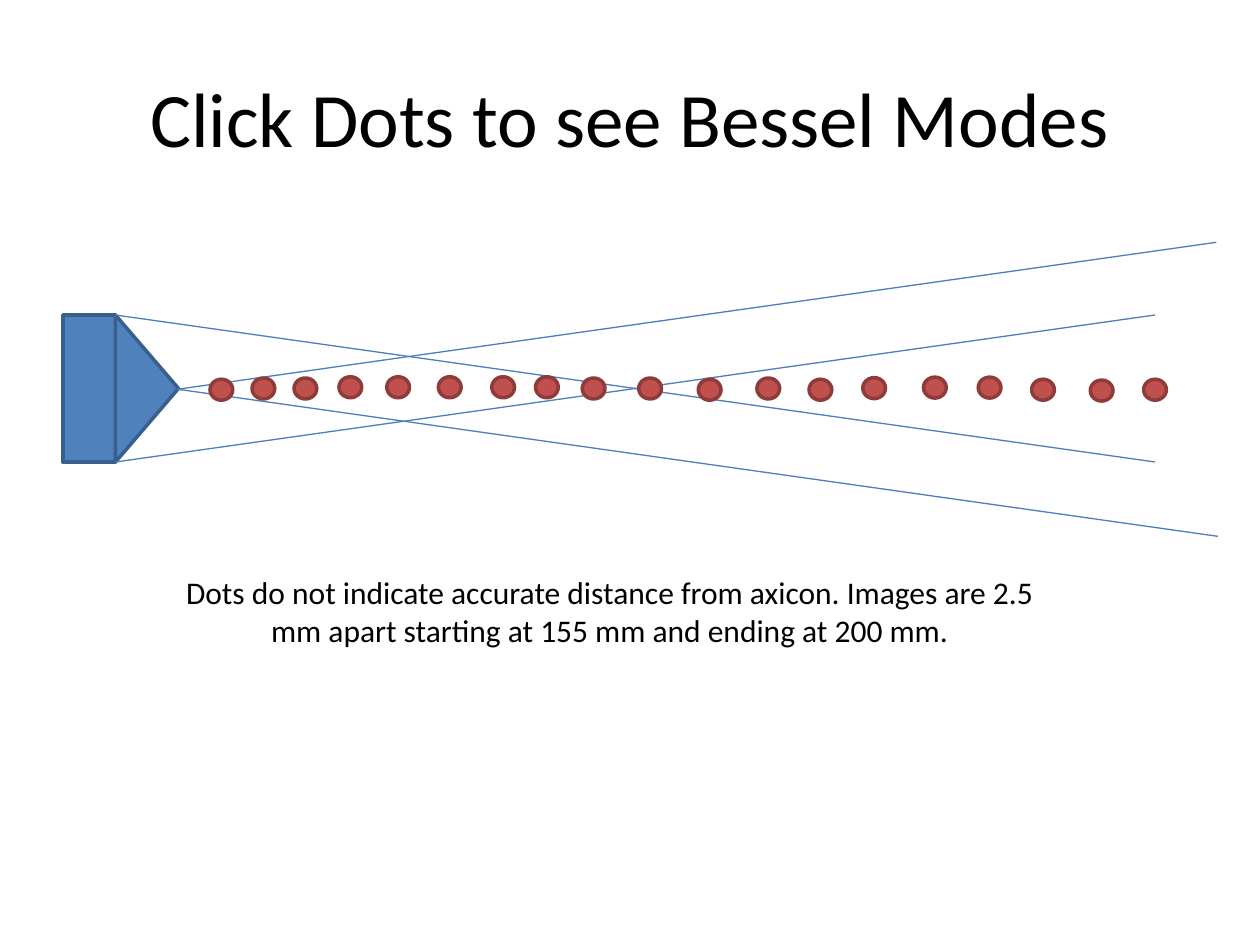
from lxml import etree
from pptx import Presentation
from pptx.dml.color import RGBColor
from pptx.enum import shapes, text
from pptx.oxml import ns
from pptx.util import Pt

BLACK = RGBColor(0x00, 0x00, 0x00)
BLUE = RGBColor(0x4F, 0x81, 0xBD)
BLUE_EDGE = RGBColor(0x3A, 0x5F, 0x8C)
RAY = RGBColor(0x4B, 0x7E, 0xBC)
RED = RGBColor(0xC0, 0x50, 0x4D)
RED_EDGE = RGBColor(0x8E, 0x3B, 0x39)

prs = Presentation()
prs.slide_width, prs.slide_height = Pt(720), Pt(540)
s = prs.slides.add_slide(prs.slide_layouts[5])


def add_solid(kind, x, y, w, h, fill, edge):
    sp = s.shapes.add_shape(kind, Pt(x), Pt(y), Pt(w), Pt(h))
    sp.shadow.inherit = False
    sp.fill.solid()
    sp.fill.fore_color.rgb = fill
    sp.line.color.rgb = edge
    sp.line.width = Pt(2)
    return sp


def write(sp, words, size):
    tf = sp.text_frame
    tf.word_wrap = True
    p = tf.paragraphs[0]
    p.alignment = text.PP_ALIGN.CENTER
    r = p.add_run()
    r.text = words
    r.font.size = Pt(size)
    r.font.name = "Calibri"
    r.font.color.rgb = BLACK


# Title
title = s.shapes.title
title.left, title.top, title.width, title.height = Pt(36), Pt(21.6), Pt(648), Pt(90)
title.text_frame.vertical_anchor = text.MSO_ANCHOR.MIDDLE
write(title, "Click Dots to see Bessel Modes", 44)

# Axicon: block and cone
add_solid(shapes.MSO_SHAPE.RECTANGLE, 36, 180, 30, 84, BLUE, BLUE_EDGE)
cone = add_solid(shapes.MSO_SHAPE.ISOSCELES_TRIANGLE, 42, 204, 84, 36, BLUE, BLUE_EDGE)
cone.rotation = 90

# Rays: all share one run and one slope, up or down
RUN, RISE = 594, 84
for x, y, way in [(66, 180, 1), (66, 264, -1), (101, 222.5, -1), (102, 222.5, 1)]:
    ray = s.shapes.add_connector(shapes.MSO_CONNECTOR.STRAIGHT,
                                 Pt(x), Pt(y), Pt(x + RUN), Pt(y + way * RISE))
    ray.line.color.rgb = RAY
    ray.line.width = Pt(0.75)
    etree.SubElement(ray._element.spPr, ns.qn("a:effectLst"))

# Dots along the axis, placed by hand: left, top
dots = [(120, 216.7), (144, 216), (168, 216), (193.7, 215.3), (221, 215.3),
        (250.5, 215.3), (281, 215.3), (306, 215.3), (332.7, 216), (365, 216),
        (399, 216.7), (432.5, 216), (462.3, 216.7), (493, 215.8), (527.7, 215.5),
        (559, 215.5), (589.5, 216.7), (623, 217.2), (653.5, 216.7)]
for x, y in dots:
    add_solid(shapes.MSO_SHAPE.OVAL, x, y, 13, 12, RED, RED_EDGE)

# Note
note = s.shapes.add_textbox(Pt(94.5), Pt(324), Pt(508), Pt(51))
write(note, "Dots do not indicate accurate distance from axicon. Images are 2.5 mm "
            "apart starting at 155 mm and ending at 200 mm.", 18)

prs.save("out.pptx")
